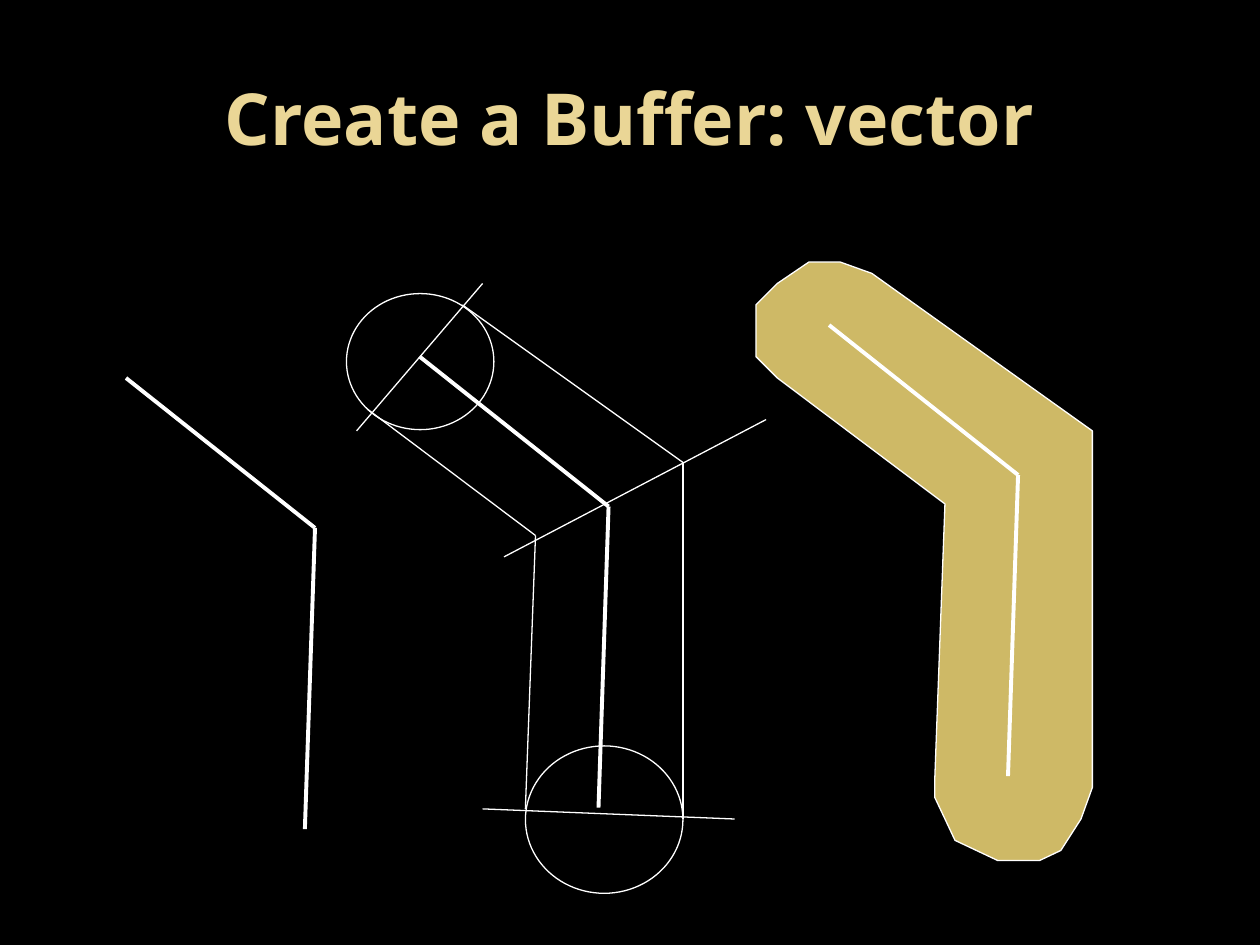
from lxml import etree
from pptx import Presentation
from pptx.dml.color import RGBColor
from pptx.enum.shapes import MSO_CONNECTOR, MSO_SHAPE
from pptx.enum.text import MSO_ANCHOR, PP_ALIGN
from pptx.oxml.ns import qn
from pptx.util import Inches, Pt

BLACK = RGBColor(0x00, 0x00, 0x00)
WHITE = RGBColor(0xFF, 0xFF, 0xFF)
TITLE_GOLD = RGBColor(0xEA, 0xD6, 0x96)
BUFFER_GOLD = RGBColor(0xCE, 0xB9, 0x66)

THICK, THIN = 2.25, 0.75

# The road: three points relative to its start, drawn once per stage
ROAD = [(0, 0), (1.5, 1.19), (1.42, 3.58)]

# Construction lines of the middle stage
CONSTRUCTION_LINES = [
    # across the ends and the bend
    ((3.83, 2.25), (2.83, 3.42)),
    ((4, 4.42), (6.08, 3.33)),
    ((3.83, 6.42), (5.83, 6.5)),
    # parallel offsets
    ((2.92, 3.25), (4.25, 4.25)),
    ((3.67, 2.42), (5.42, 3.67)),
    ((4.25, 4.25), (4.17, 6.42)),
    ((5.42, 3.67), (5.42, 6.5)),
]
END_CIRCLES = [(4.17, 5.92, 1.25, 1.17), (2.75, 2.33, 1.17, 1.08)]

BUFFER_OUTLINE = [
    (6.17, 3), (6, 2.83), (6, 2.42), (6.17, 2.25), (6.42, 2.08),
    (6.67, 2.08), (6.92, 2.17), (8.67, 3.42), (8.67, 6.25), (8.58, 6.5),
    (8.42, 6.75), (8.25, 6.83), (7.92, 6.83), (7.58, 6.67), (7.5, 6.5),
    (7.42, 6.33), (7.42, 6.17), (7.5, 4),
]


class SlideBuilder:
    """Draws the elements of one slide in a shared style."""

    font = "Open Sans"
    line_color = WHITE

    def __init__(self, slide):
        self.slide = slide
        slide.background.fill.solid()
        slide.background.fill.fore_color.rgb = BLACK

    def title(self, text, left, top, width, height):
        shape = self.slide.shapes.title
        shape.left, shape.top = Inches(left), Inches(top)
        shape.width, shape.height = Inches(width), Inches(height)
        text_frame = shape.text_frame
        text_frame.text = text
        text_frame.vertical_anchor = MSO_ANCHOR.MIDDLE
        paragraph = text_frame.paragraphs[0]
        paragraph.alignment = PP_ALIGN.CENTER
        font = paragraph.runs[0].font
        font.name, font.size, font.bold = self.font, Pt(41), True
        font.color.rgb = TITLE_GOLD

    def style_line(self, shape, weight):
        shape.line.color.rgb = self.line_color
        shape.line.width = Pt(weight)

    def line(self, start, end, weight=THIN):
        connector = self.slide.shapes.add_connector(
            MSO_CONNECTOR.STRAIGHT, *map(Inches, (*start, *end)))
        self.style_line(connector, weight)
        etree.SubElement(connector._element.spPr, qn("a:effectLst"))

    def road(self, left, top):
        points = [(left + x, top + y) for x, y in ROAD]
        for start, end in zip(points, points[1:]):
            self.line(start, end, THICK)

    def circle(self, left, top, width, height):
        shape = self.slide.shapes.add_shape(
            MSO_SHAPE.OVAL, *map(Inches, (left, top, width, height)))
        shape.shadow.inherit = False
        shape.fill.background()
        self.style_line(shape, THIN)

    def polygon(self, points, color):
        corners = [(Inches(x), Inches(y)) for x, y in points]
        builder = self.slide.shapes.build_freeform(*corners[0])
        builder.add_line_segments(corners[1:], close=True)
        shape = builder.convert_to_shape()
        shape.shadow.inherit = False
        shape.fill.solid()
        shape.fill.fore_color.rgb = color
        self.style_line(shape, THIN)


def main():
    presentation = Presentation()
    presentation.slide_width = Inches(10)
    presentation.slide_height = Inches(7.5)
    title_only = presentation.slide_layouts[5]
    builder = SlideBuilder(presentation.slides.add_slide(title_only))

    builder.title("Create a Buffer: vector", 0.5, 0.3, 9, 1.25)

    # Middle stage: geometric construction
    builder.road(3.33, 2.83)
    for start, end in CONSTRUCTION_LINES:
        builder.line(start, end)
    for circle in END_CIRCLES:
        builder.circle(*circle)

    # Left stage: the road alone
    builder.road(1, 3)

    # Right stage: the finished buffer around the road
    builder.polygon(BUFFER_OUTLINE, BUFFER_GOLD)
    builder.road(6.58, 2.58)

    presentation.save("out.pptx")


if __name__ == "__main__":
    main()
